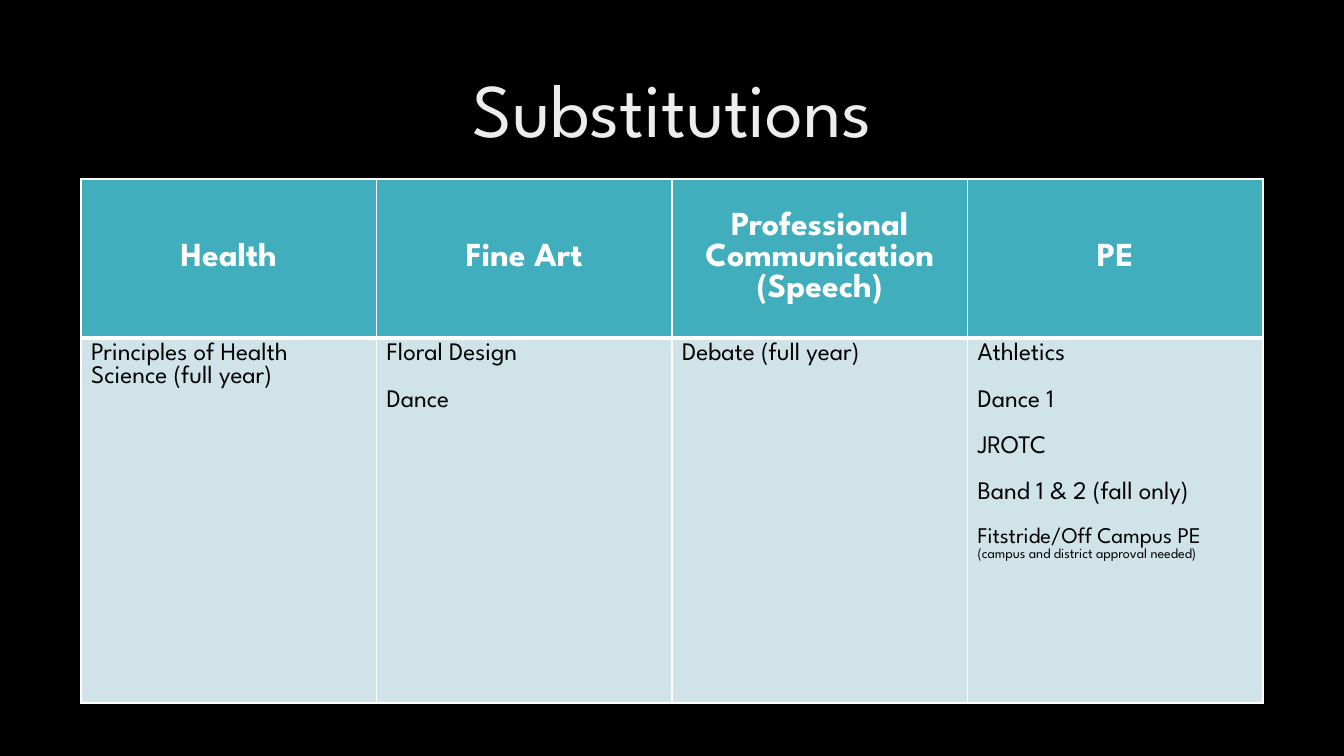
import pptx
import pptx.util
import pptx.dml.color
import pptx.enum.text
import pptx.oxml
import pptx.oxml.ns

PX = 914400 / 100.8  # EMU in one px
ALIGN = pptx.enum.text.PP_ALIGN
ANCHOR = pptx.enum.text.MSO_ANCHOR

THEME = {
    "font": "League Spartan",
    "back": "000000",
    "title": "EDEDED",
    "head": "41AEBD",
    "body": "CFE3E8",
    "rule": "FFFFFF",
    "light": "FFFFFF",
    "dark": "000000",
    "size": {"title": 54, "head": 24, "body": 18, "minor": 16, "note": 10},
    "gap": 16.5,
}

# Each column: heading, then entries of (text, size name, gap before)
COLUMNS = [
    ("Health", [("Principles of Health Science (full year)", "body", False)]),
    ("Fine Art", [("Floral Design", "body", False), ("Dance", "body", True)]),
    ("Professional Communication (Speech)",
     [("Debate (full year)", "body", False)]),
    ("PE", [
        ("Athletics", "body", False),
        ("Dance 1", "body", True),
        ("JROTC", "body", True),
        ("Band 1 & 2 (fall only)", "body", True),
        ("Fitstride/Off Campus PE", "minor", True),
        ("(campus and district approval needed)", "note", False),
    ]),
]


def px(num):
    return pptx.util.Emu(round(num * PX))


def rgb(code):
    return pptx.dml.color.RGBColor.from_string(code)


def style(item, form):
    for name, value in form.items():
        setattr(item, name, value)


def write(para, text, size, color, bold=False, **form):
    run = para.add_run()
    run.text = text
    style(run.font, {"name": THEME["font"], "bold": bold,
                     "size": pptx.util.Pt(THEME["size"][size])})
    run.font.color.rgb = rgb(color)
    style(para, form)


def border(cell, widths):
    """Draw the cell edges; widths maps L, R, T, B to points."""
    props = cell._tc.get_or_add_tcPr()
    for side, width in widths.items():
        props.append(pptx.oxml.parse_xml(
            f'<a:ln{side} {pptx.oxml.ns.nsdecls("a")} w="{width * 12700}">'
            f'<a:solidFill><a:srgbClr val="{THEME["rule"]}"/></a:solidFill>'
            f'</a:ln{side}>'))


def paint(cell, color, widths):
    border(cell, widths)  # edges must come before the fill
    cell.fill.solid()
    cell.fill.fore_color.rgb = rgb(color)


def title(slide, text):
    box = slide.shapes.add_textbox(px(93), px(40), px(1159), px(146))
    style(box.text_frame, {"word_wrap": True,
                           "vertical_anchor": ANCHOR.MIDDLE})
    write(box.text_frame.paragraphs[0], text, "title", THEME["title"],
          alignment=ALIGN.CENTER, line_spacing=0.9)


def grid(slide, columns):
    table = slide.shapes.add_table(
        2, len(columns), px(81), px(179), px(1182), px(524)).table
    style(table, {"first_row": True, "horz_banding": False})
    for row, height in zip(table.rows, (159, 365)):
        row.height = px(height)

    for col, (name, items) in enumerate(columns):
        # Heading cell
        head = table.cell(0, col)
        paint(head, THEME["head"], {"L": 1, "R": 1, "T": 1, "B": 3})
        head.vertical_anchor = ANCHOR.MIDDLE
        write(head.text_frame.paragraphs[0], name, "head", THEME["light"],
              bold=True, alignment=ALIGN.CENTER)

        # Entries cell
        body = table.cell(1, col)
        paint(body, THEME["body"], {"L": 1, "R": 1, "T": 3, "B": 1})
        frame = body.text_frame
        for num, (text, size, gap) in enumerate(items):
            para = frame.add_paragraph() if num else frame.paragraphs[0]
            form = {"space_before": pptx.util.Pt(THEME["gap"])} if gap else {}
            write(para, text, size, THEME["dark"], **form)


def main():
    deck = pptx.Presentation()
    style(deck, {"slide_width": px(1344), "slide_height": px(756)})
    slide = deck.slides.add_slide(deck.slide_layouts[6])
    slide.background.fill.solid()
    slide.background.fill.fore_color.rgb = rgb(THEME["back"])
    title(slide, "Substitutions")
    grid(slide, COLUMNS)
    deck.save("out.pptx")


if __name__ == "__main__":
    main()
